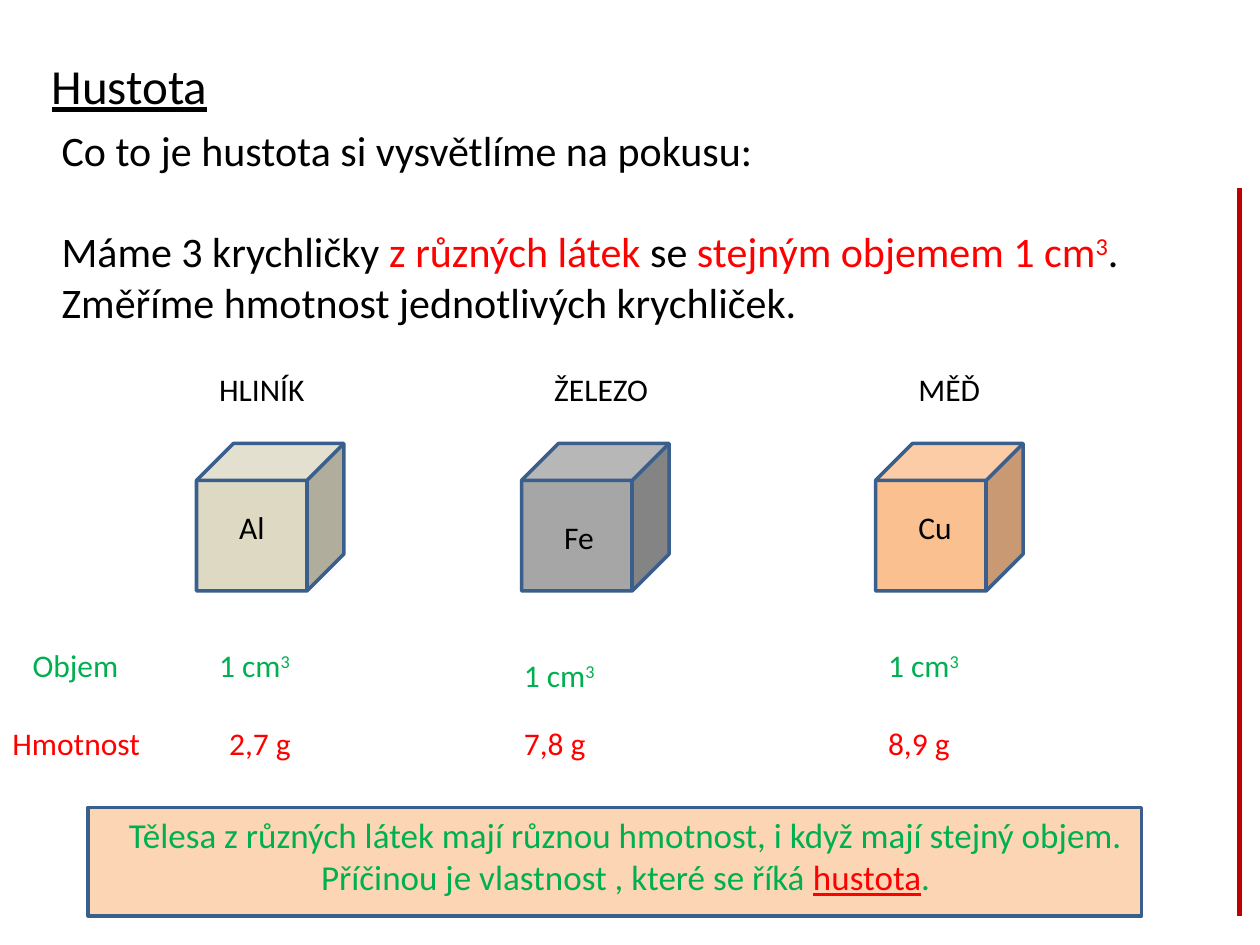
import pptx
import pptx.dml.color
import pptx.enum.shapes
import pptx.enum.text
import pptx.util
import lxml.etree
from pptx.util import Inches

BLACK, RED, GREEN = "000000", "FF0000", "00B050"
OUTLINE, ACCENT = "3A5F8C", "C00000"
LABEL_HEIGHT = Inches(0.4)
CUBE_SIZE = Inches(1.17)


def rgb(value):
    return pptx.dml.color.RGBColor.from_string(value)


def write_paragraph(paragraph, runs, size, color=BLACK, alignment=pptx.enum.text.PP_ALIGN.LEFT):
    paragraph.alignment = alignment
    paragraph.font.name = "Calibri"
    paragraph.font.size = pptx.util.Pt(size)
    paragraph.font.color.rgb = rgb(color)
    for text, style in runs:
        run = paragraph.add_run()
        run.text = text
        if "color" in style:
            run.font.color.rgb = rgb(style["color"])
        if style.get("underline"):
            run.font.underline = True
        if style.get("superscript"):
            run.font._element.set("baseline", "30000")


def add_text(slide, box, paragraphs, size, color=BLACK, alignment=pptx.enum.text.PP_ALIGN.LEFT):
    frame = slide.shapes.add_textbox(*box).text_frame
    frame.word_wrap = True
    for index, runs in enumerate(paragraphs):
        paragraph = frame.add_paragraph() if index else frame.paragraphs[0]
        write_paragraph(paragraph, runs, size, color, alignment)
    return frame


def add_label(slide, left, top, width, text, color=BLACK, superscript=""):
    runs = [(text, {})]
    if superscript:
        runs.append((superscript, {"superscript": True}))
    add_text(slide, (left, top, width, LABEL_HEIGHT), [runs], 18, color)


def add_filled_shape(slide, kind, box, fill):
    shape = slide.shapes.add_shape(kind, *box)
    shape.shadow.inherit = False
    shape.fill.solid()
    shape.fill.fore_color.rgb = rgb(fill)
    shape.line.color.rgb = rgb(OUTLINE)
    shape.line.width = pptx.util.Pt(2)


def format_title(slide, box):
    title = slide.shapes.title
    title.left, title.top, title.width, title.height = box
    frame = title.text_frame
    frame.vertical_anchor = pptx.enum.text.MSO_ANCHOR.TOP
    frame.auto_size = pptx.enum.text.MSO_AUTO_SIZE.NONE
    write_paragraph(frame.paragraphs[0], [("Hustota", {"underline": True})], 28)


def add_introduction(slide, box):
    red = {"color": RED}
    frame = add_text(slide, box, [
        [("Co to je hustota si vysvětlíme na pokusu:", {})],
        [
            ("Máme 3 krychličky ", {}),
            ("z různých látek ", red),
            ("se ", {}),
            ("stejným objemem 1 cm", red),
            ("3", {"color": RED, "superscript": True}),
            (".", {}),
        ],
        [("Změříme hmotnost jednotlivých krychliček.", {})],
    ], 24)
    frame.paragraphs[1].space_before = pptx.util.Pt(29)


def add_material(slide, box, material):
    left, top, width, height = box
    add_label(slide, left + Inches(material["name_shift"]), top, Inches(1.41), material["name"])
    cube_top = top + Inches(0.63)
    add_filled_shape(slide, pptx.enum.shapes.MSO_SHAPE.CUBE,
                     (left, cube_top, width, CUBE_SIZE), material["fill"])
    drop = Inches(material["drop"])
    add_label(slide, left + Inches(0.24), top + Inches(1.09) + drop, Inches(0.47), material["symbol"])
    add_label(slide, left + Inches(material["volume_shift"]), top + Inches(2.19) + drop,
              Inches(0.94), "1 cm", GREEN, "3")
    add_label(slide, left + Inches(material["mass_shift"]), top + height - LABEL_HEIGHT,
              Inches(0.86), material["mass"], RED)


def add_row_names(slide, box):
    left, top, width, height = box
    add_label(slide, left + Inches(0.16), top, Inches(1.25), "Objem", GREEN)
    add_label(slide, left, top + height - LABEL_HEIGHT, width, "Hmotnost", RED)


def add_conclusion(slide, box):
    left, top, width, height = box
    add_filled_shape(slide, pptx.enum.shapes.MSO_SHAPE.RECTANGLE, box, "FCD5B5")
    text_box = (left - Inches(0.54), top, width + Inches(1.25), height - Inches(0.09))
    add_text(slide, text_box, [
        [("Tělesa z různých látek mají různou hmotnost, i když mají stejný objem.", {})],
        [
            ("Příčinou je vlastnost , které se říká ", {}),
            ("hustota", {"color": RED, "underline": True}),
            (".", {}),
        ],
    ], 20, GREEN, pptx.enum.text.PP_ALIGN.CENTER)


def add_side_line(slide, left, top, bottom):
    line = slide.shapes.add_connector(
        pptx.enum.shapes.MSO_CONNECTOR.STRAIGHT, left, top, left, bottom)
    line.line.color.rgb = rgb(ACCENT)
    line.line.width = pptx.util.Pt(3)
    lxml.etree.SubElement(line._element.spPr, pptx.oxml.ns.qn("a:effectLst"))


def main():
    presentation = pptx.Presentation()
    presentation.slide_width, presentation.slide_height = Inches(10), Inches(7.5)
    slide = presentation.slides.add_slide(presentation.slide_layouts[5])
    format_title(slide, (Inches(0.31), Inches(0.39), Inches(9.38), Inches(0.57)))
    add_introduction(slide, (Inches(0.39), Inches(0.94), Inches(9.22), Inches(1.72)))
    materials = [
        {"left": 1.56, "name": "HLINÍK", "symbol": "Al", "mass": "2,7 g", "fill": "DDD9C3",
         "name_shift": 0.08, "volume_shift": 0.08, "mass_shift": 0.16, "drop": 0},
        {"left": 4.14, "name": "ŽELEZO", "symbol": "Fe", "mass": "7,8 g", "fill": "A6A6A6",
         "name_shift": 0.16, "volume_shift": -0.08, "mass_shift": -0.08, "drop": 0.08},
        {"left": 6.95, "name": "MĚĎ", "symbol": "Cu", "mass": "8,9 g", "fill": "FAC090",
         "name_shift": 0.24, "volume_shift": 0, "mass_shift": 0, "drop": 0},
    ]
    for material in materials:
        box = (Inches(material["left"]), Inches(2.89), CUBE_SIZE, Inches(3.21))
        add_material(slide, box, material)
    add_row_names(slide, (Inches(0), Inches(5.08), Inches(1.48), Inches(1.02)))
    add_conclusion(slide, (Inches(0.7), Inches(6.41), Inches(8.36), Inches(0.86)))
    add_side_line(slide, Inches(9.84), Inches(1.49), Inches(7.27))
    presentation.save("out.pptx")


if __name__ == "__main__":
    main()
